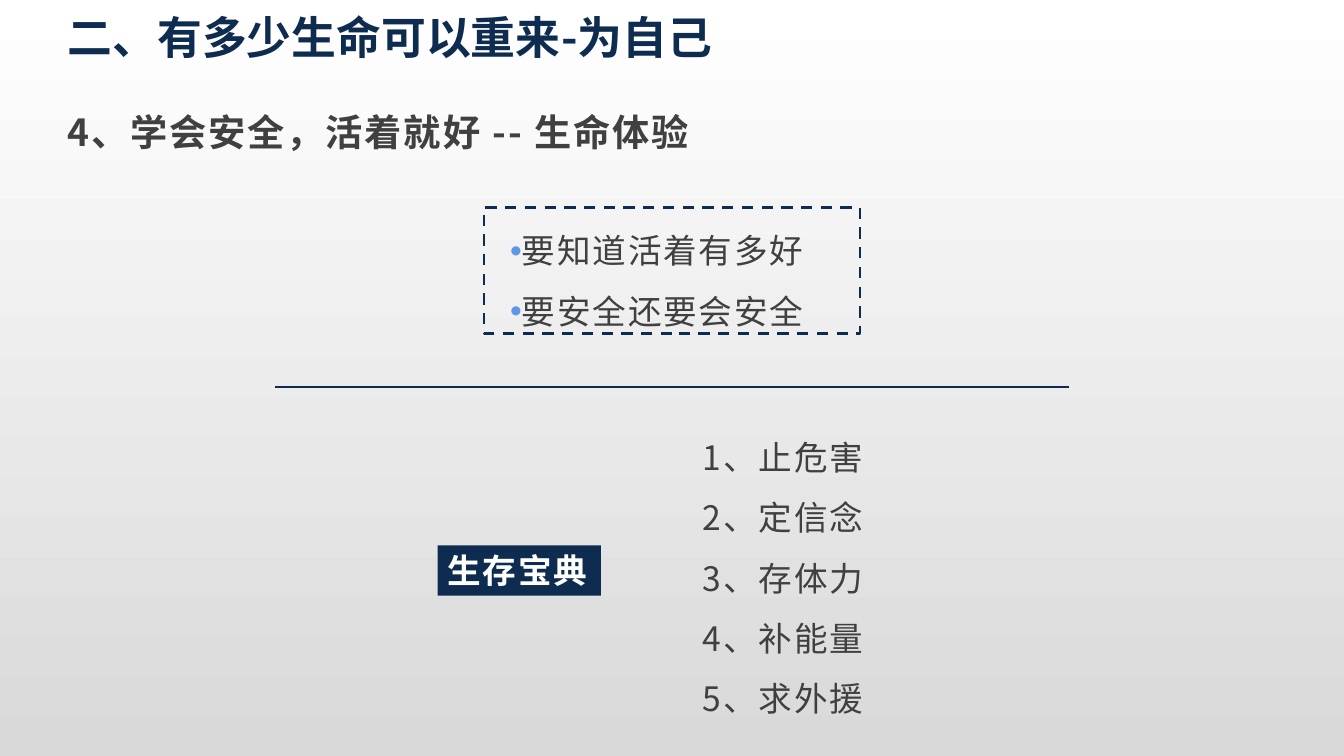
from dataclasses import dataclass

from lxml import etree
from pptx import Presentation
from pptx.dml.color import RGBColor
from pptx.enum.dml import MSO_LINE
from pptx.enum.shapes import MSO_CONNECTOR, MSO_SHAPE
from pptx.enum.text import MSO_ANCHOR, MSO_AUTO_SIZE, PP_ALIGN
from pptx.oxml.ns import qn
from pptx.util import Inches, Pt

DASH = MSO_LINE.DASH
STRAIGHT = MSO_CONNECTOR.STRAIGHT
RECTANGLE = MSO_SHAPE.RECTANGLE
TOP, MIDDLE = MSO_ANCHOR.TOP, MSO_ANCHOR.MIDDLE
GROW = MSO_AUTO_SIZE.SHAPE_TO_FIT_TEXT
LEFT, JUSTIFY = PP_ALIGN.LEFT, PP_ALIGN.JUSTIFY
TWO_CONTENT_LAYOUT = 3


@dataclass(frozen=True)
class Theme:
    """Colours, type sizes and font of the slide."""
    navy: str = "0E2C50"
    text: str = "404040"
    bullet: str = "6096E6"
    white: str = "FFFFFF"
    grey: str = "D9D9D9"
    font: str = "Noto Sans CJK SC"
    title: float = 32
    subtitle: float = 26.6
    body: float = 24
    spacing: float = 1.3
    line: float = 2


THEME = Theme()


def rgb(value):
    """Turn a hex string into a colour."""
    return RGBColor.from_string(value)


def place(shape, left, top, width, height):
    """Move and size a shape in inches."""
    shape.left, shape.top = Inches(left), Inches(top)
    shape.width, shape.height = Inches(width), Inches(height)


def set_bullet(paragraph, bullet):
    """Start a paragraph at the margin, with a bullet or without one."""
    props = paragraph._p.get_or_add_pPr()
    props.set("marL", "0")
    props.set("indent", "0")
    if not bullet:
        etree.SubElement(props, qn("a:buNone"))
        return
    colour = etree.SubElement(props, qn("a:buClr"))
    etree.SubElement(colour, qn("a:srgbClr"), val=THEME.bullet)
    etree.SubElement(props, qn("a:buFont"), typeface="Arial")
    etree.SubElement(props, qn("a:buChar"), char=bullet)


def write(shape, *lines, size=THEME.body, colour=THEME.text, bold=False, spacing=THEME.spacing,
          leading=1, align=LEFT, anchor=TOP, inset=0.1, wrap=True, bullet=None):
    """Fill a shape with formatted paragraphs."""
    frame = shape.text_frame
    frame.text = "\n".join(lines)
    frame.word_wrap, frame.auto_size, frame.vertical_anchor = wrap, GROW, anchor
    frame.margin_left = frame.margin_right = Inches(inset)
    frame.margin_top = frame.margin_bottom = Inches(0.1 if bullet else 0.05)
    for paragraph in frame.paragraphs:
        set_bullet(paragraph, bullet)
        paragraph.alignment, paragraph.line_spacing = align, leading
        paragraph.space_before = Pt(0)
        for run in paragraph.runs:
            font = run.font
            font.size, font.bold, font.name = Pt(size), bold, THEME.font
            font.color.rgb = rgb(colour)
            props = run._r.get_or_add_rPr()
            props.set("spc", str(round(spacing * 100)))
            etree.SubElement(props, qn("a:ea"), typeface=THEME.font)


def paint_background(slide):
    """Shade the slide from white down to grey."""
    fill = slide.background.fill
    fill.gradient()
    fill.gradient_angle = 270
    for stop, colour in zip(fill.gradient_stops, (THEME.white, THEME.grey)):
        stop.color.rgb = rgb(colour)


def outline(line):
    """Draw a line in the navy of the slide."""
    line.color.rgb = rgb(THEME.navy)
    line.width = Pt(THEME.line)


def add_divider(slide, left, right, y):
    """Add a horizontal rule."""
    divider = slide.shapes.add_connector(
        STRAIGHT, Inches(left), Inches(y), Inches(right), Inches(y))
    outline(divider.line)
    etree.SubElement(divider._element.spPr, qn("a:effectLst"))


def add_label(slide, text, *box):
    """Add a navy label with white text."""
    label = slide.shapes.add_shape(RECTANGLE, *map(Inches, box))
    label.shadow.inherit = False
    label.fill.solid()
    label.fill.fore_color.rgb = rgb(THEME.navy)
    label.line.fill.background()
    write(label, text, colour=THEME.white, bold=True, anchor=MIDDLE, wrap=False)


def main():
    """Build the slide and save it."""
    deck = Presentation()
    deck.slide_width, deck.slide_height = Inches(13.33), Inches(7.5)
    slide = deck.slides.add_slide(deck.slide_layouts[TWO_CONTENT_LAYOUT])
    for unused in list(slide.placeholders)[3:]:
        unused._element.getparent().remove(unused._element)
    title, insights, survival_steps = slide.placeholders
    paint_background(slide)

    place(title, 0.57, 0.05, 9.15, 0.64)
    write(title, "二、有多少生命可以重来-为自己",
          size=THEME.title, colour=THEME.navy, bold=True, spacing=0)

    subtitle = slide.shapes.add_textbox(*map(Inches, (0.57, 1.03, 10.45, 0.55)))
    write(subtitle, "4、学会安全，活着就好 -- 生命体验", size=THEME.subtitle, bold=True)

    place(insights, 4.8, 2.01, 3.73, 1.35)
    outline(insights.line)
    insights.line.dash_style = DASH
    write(insights, "要知道活着有多好", "要安全还要会安全",
          leading=1.5, align=JUSTIFY, anchor=MIDDLE, inset=0.26, bullet="•")

    add_divider(slide, 2.73, 10.6, 3.84)
    add_label(slide, "生存宝典", 4.34, 5.41, 1.62, 0.5)

    steps = ("止危害", "定信念", "存体力", "补能量", "求外援")
    place(survival_steps, 6.87, 4.08, 2.12, 3.06)
    write(survival_steps, *(f"{number}、{step}" for number, step in enumerate(steps, 1)),
          leading=1.5)

    deck.save("out.pptx")


if __name__ == "__main__":
    main()
